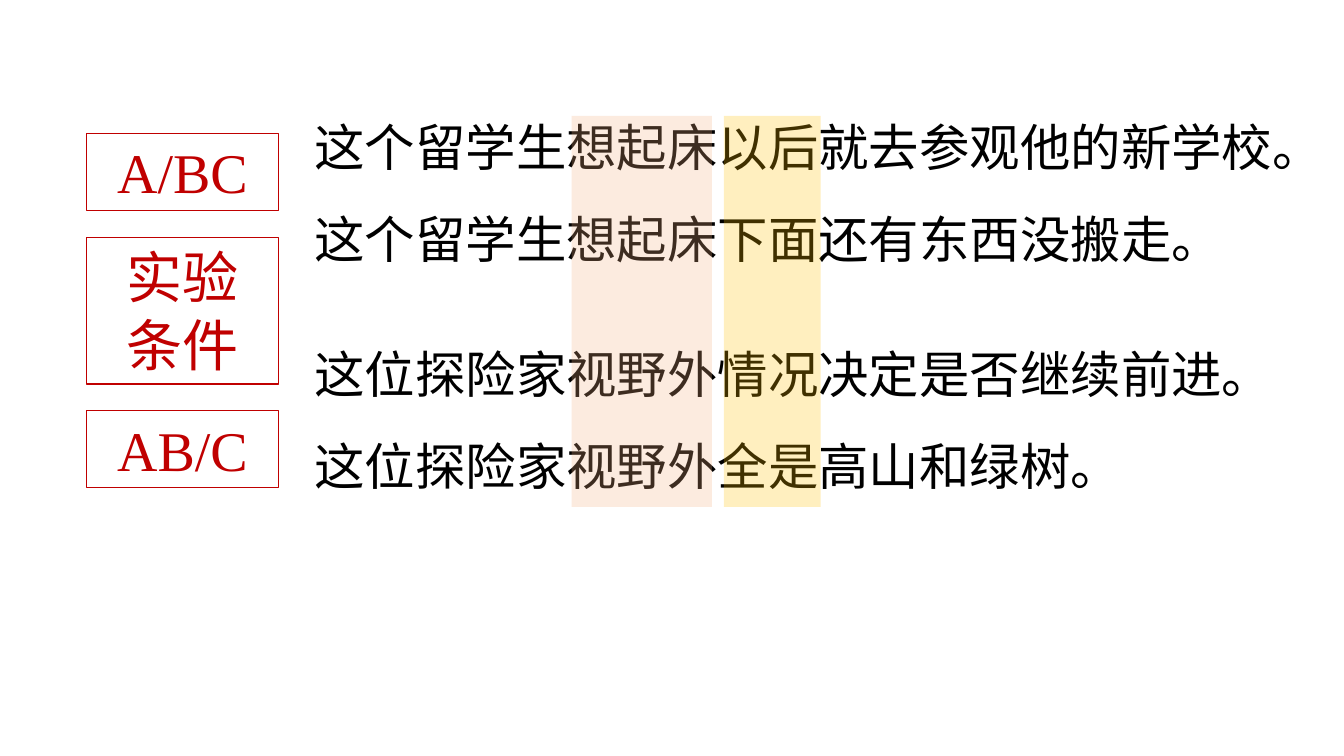
import dataclasses

import pptx
import pptx.dml.color
import pptx.enum.shapes
import pptx.enum.text
import pptx.oxml
import pptx.oxml.ns
import pptx.util

Inches = pptx.util.Inches
Pt = pptx.util.Pt


@dataclasses.dataclass(frozen=True)
class Theme:
    """Colours, fonts and type sizes of the slide."""
    ink: str = "000000"
    accent: str = "C00000"
    verb_band: str = "F4B183"
    contrast_band: str = "FFC000"
    band_alpha: int = 25
    chinese: str = "Noto Sans CJK SC"
    latin: str = "Times New Roman"
    sentence_size: int = 36
    label_size: int = 40
    leading: float = 1.2


class ConditionSlide:
    """Draws sentences, highlight bands and condition labels on one slide."""

    def __init__(self, slide, theme):
        self.slide = slide
        self.theme = theme

    def set_text(self, frame, text, size, color, font, align):
        """Fill a text frame with evenly styled paragraphs."""
        frame.word_wrap = True
        frame.text = text
        for paragraph in frame.paragraphs:
            paragraph.alignment = align
            paragraph.font.size = Pt(size)
            paragraph.font.name = font
            paragraph.font.color.rgb = pptx.dml.color.RGBColor.from_string(color)
            if font == self.theme.chinese:
                paragraph.line_spacing = Pt(size * self.theme.leading)
            for run in paragraph.runs:
                properties = run._r.get_or_add_rPr()
                properties.set("lang", "zh-CN")
                east_asian = pptx.oxml.parse_xml(
                    f'<a:ea {pptx.oxml.ns.nsdecls("a")} typeface="{font}"/>')
                properties.append(east_asian)

    def sentence_pair(self, top, sentences):
        """Group two contrasting sentences, one above the other."""
        pair = self.slide.shapes.add_group_shape()
        for row, sentence in enumerate(sentences):
            box = pair.shapes.add_textbox(
                Inches(3.02), Inches(top + row * 0.92), Inches(9.95), Inches(0.71))
            self.set_text(box.text_frame, sentence, self.theme.sentence_size,
                          self.theme.ink, self.theme.chinese,
                          pptx.enum.text.PP_ALIGN.LEFT)

    def rectangle(self, left, top, width, height):
        """Add a rectangle without a shadow."""
        shape = self.slide.shapes.add_shape(
            pptx.enum.shapes.MSO_SHAPE.RECTANGLE,
            Inches(left), Inches(top), Inches(width), Inches(height))
        shape.shadow.inherit = False
        return shape

    def band(self, left, width, color):
        """Add a translucent band across all sentences."""
        band = self.rectangle(left, 1.15, width, 3.88)
        band.line.fill.background()
        band.fill.solid()
        band.fill.fore_color.rgb = pptx.dml.color.RGBColor.from_string(color)
        tint = band.fill._xPr.find(".//" + pptx.oxml.ns.qn("a:srgbClr"))
        tint.append(pptx.oxml.parse_xml(
            f'<a:alpha {pptx.oxml.ns.nsdecls("a")} '
            f'val="{self.theme.band_alpha * 1000}"/>'))

    def label(self, top, height, text, font):
        """Add an outlined condition label."""
        label = self.rectangle(0.86, top, 1.9, height)
        label.fill.background()
        label.line.color.rgb = pptx.dml.color.RGBColor.from_string(self.theme.accent)
        label.line.width = Pt(0.75)
        label.text_frame.vertical_anchor = pptx.enum.text.MSO_ANCHOR.TOP
        self.set_text(label.text_frame, text, self.theme.label_size,
                      self.theme.accent, font, pptx.enum.text.PP_ALIGN.CENTER)


def main():
    """Build and save the slide."""
    deck = pptx.Presentation()
    deck.slide_width, deck.slide_height = Inches(13.33), Inches(7.5)
    theme = Theme()
    page = ConditionSlide(deck.slides.add_slide(deck.slide_layouts[6]), theme)

    page.sentence_pair(1.1, ("这个留学生想起床以后就去参观他的新学校。",
                             "这个留学生想起床下面还有东西没搬走。"))
    page.sentence_pair(3.35, ("这位探险家视野外情况决定是否继续前进。",
                              "这位探险家视野外全是高山和绿树。"))
    page.band(5.67, 1.39, theme.verb_band)
    page.band(7.18, 0.96, theme.contrast_band)
    page.label(1.32, 0.77, "A/BC", theme.latin)
    page.label(4.07, 0.77, "AB/C", theme.latin)
    page.label(2.36, 1.45, "实验\n条件", theme.chinese)
    deck.save("out.pptx")


if __name__ == "__main__":
    main()
